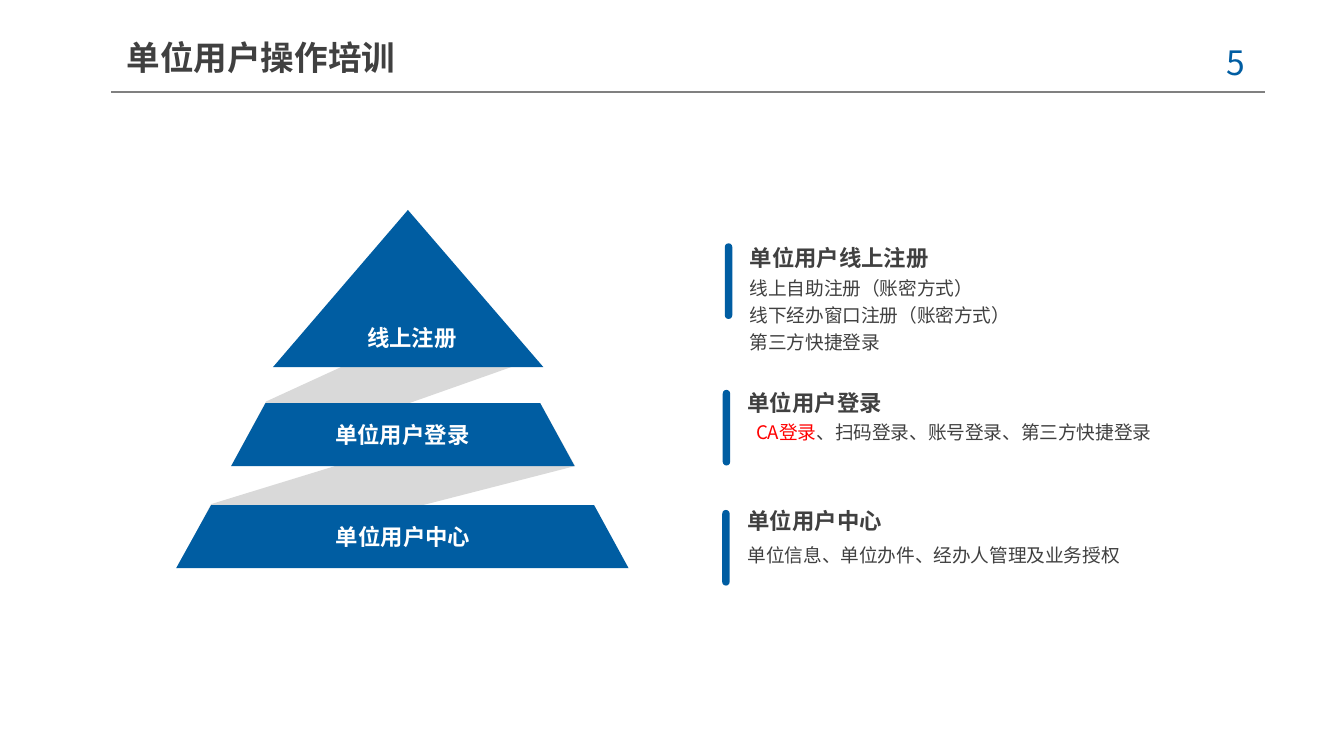
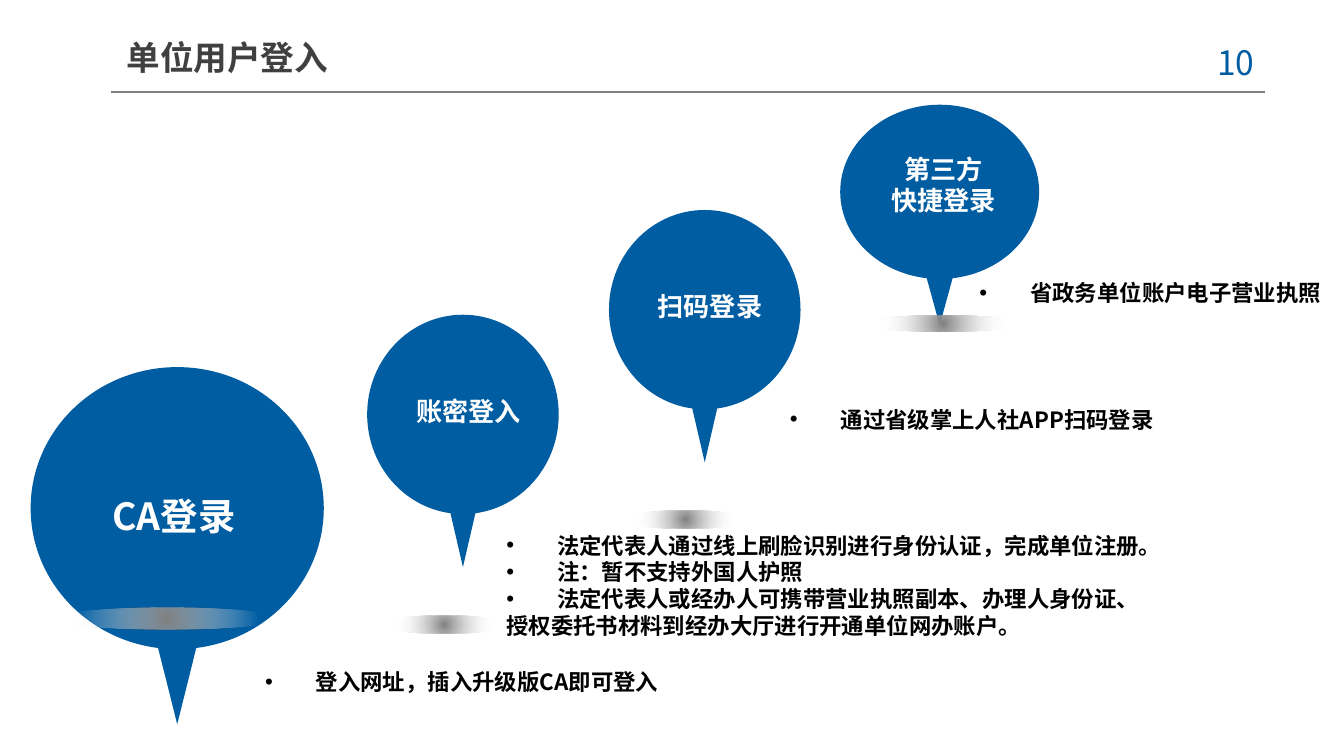
from math import asin, cos, pi, sin, tan

from pptx import Presentation
from pptx.dml.color import RGBColor
from pptx.enum.shapes import MSO_CONNECTOR, MSO_SHAPE
from pptx.enum.text import MSO_ANCHOR, MSO_AUTO_SIZE, PP_ALIGN
from pptx.oxml import parse_xml
from pptx.oxml.ns import nsdecls, qn
from pptx.util import Cm, Pt

FONT = "Noto Sans CJK SC"
BLUE = RGBColor(0x00, 0x5D, 0xA2)
DARK = RGBColor(0x40, 0x40, 0x40)
GREY = RGBColor(0x80, 0x80, 0x80)
PALE = RGBColor(0xD9, 0xD9, 0xD9)
RED = RGBColor(0xFF, 0x00, 0x00)
BLACK = RGBColor(0x00, 0x00, 0x00)
WHITE = RGBColor(0xFF, 0xFF, 0xFF)

LEFT, CENTER, JUSTIFY = PP_ALIGN.LEFT, PP_ALIGN.CENTER, PP_ALIGN.JUSTIFY
TOP, MIDDLE = MSO_ANCHOR.TOP, MSO_ANCHOR.MIDDLE
GROW, FIXED = MSO_AUTO_SIZE.SHAPE_TO_FIT_TEXT, MSO_AUTO_SIZE.NONE
STRAIGHT = MSO_CONNECTOR.STRAIGHT
ELLIPSE, ROUND_BAR = MSO_SHAPE.OVAL, MSO_SHAPE.ROUND_2_SAME_RECTANGLE

DEFAULT_INSETS = (0.25, 0.13)
SMALL_INSETS = (0.1, 0.05)
BULLET_INDENT = 0.96
BODY_SHARE = 0.79    # part of a balloon's height taken by its round body
TAIL_GAP = asin(0.13)  # half the angle left open for the tail


class Painter:
    def __init__(self):
        self.deck = Presentation()
        self.deck.slide_width = Cm(25.4)
        self.deck.slide_height = Cm(14.29)
        self.page = None

    def new_page(self, title, number):
        self.page = self.deck.slides.add_slide(self.deck.slide_layouts[6])
        rule = self.page.shapes.add_connector(
            STRAIGHT, Cm(2.1), Cm(1.74), Cm(23.9), Cm(1.74))
        rule.line.color.rgb = GREY
        rule.line.width = Pt(0.75)
        rule._element.spPr.append(parse_xml(f"<a:effectLst {nsdecls('a')}/>"))
        self.text((22.5, 0.66, 1.86, 1.02), [f"{number} "], 18, BLUE, align=CENTER)
        self.text((2.39, 0.55, 13.21, 1.06), [title], 18, DARK, bold=True,
                  anchor=MIDDLE, insets=(0, 0.13))

    def text(self, place, lines, size, color, bold=False, align=LEFT, anchor=TOP,
             insets=DEFAULT_INSETS, spacing=None, bullets=0):
        """Each line is a string or a list of (text, colour); the first `bullets` lines get a dot."""
        box = self.page.shapes.add_textbox(*map(Cm, place))
        frame = box.text_frame
        frame.word_wrap = True
        frame.vertical_anchor = anchor
        frame.auto_size = FIXED if anchor == MIDDLE else GROW
        frame.margin_left = frame.margin_right = Cm(insets[0])
        frame.margin_top = frame.margin_bottom = Cm(insets[1])
        for index, line in enumerate(lines):
            para = frame.add_paragraph() if index else frame.paragraphs[0]
            para.alignment = align
            if spacing:
                para.line_spacing = spacing
            if index < bullets:
                self.bullet(para)
            for words, tint in [(line, color)] if isinstance(line, str) else line:
                span = para.add_run()
                span.text = words
                self.style(span.font, size, tint, bold)

    @staticmethod
    def style(font, size, color, bold):
        font.size = Pt(size)
        font.bold = bold
        font.color.rgb = color
        font.name = FONT
        font._element.append(parse_xml(f'<a:ea {nsdecls("a")} typeface="{FONT}"/>'))

    @staticmethod
    def bullet(para):
        properties = para._p.get_or_add_pPr()
        properties.set("marL", str(Cm(BULLET_INDENT)))
        properties.set("indent", str(-Cm(BULLET_INDENT)))
        for tag in ('buFont {} typeface="Arial"', 'buChar {} char="•"'):
            properties.append(parse_xml(f"<a:{tag.format(nsdecls('a'))}/>"))

    @staticmethod
    def paint(shape, color):
        shape.shadow.inherit = False
        shape.line.fill.background()
        shape.fill.solid()
        shape.fill.fore_color.rgb = color

    def polygon(self, points, color):
        corners = [(Cm(x), Cm(y)) for x, y in points]
        builder = self.page.shapes.build_freeform(*corners[0])
        builder.add_line_segments(corners[1:], close=True)
        shape = builder.convert_to_shape()
        self.paint(shape, color)
        return shape

    def bar(self, left, top):
        shape = self.page.shapes.add_shape(
            ROUND_BAR, Cm(left), Cm(top), Cm(0.14), Cm(1.43))
        shape.adjustments[0] = shape.adjustments[1] = 0.5
        self.paint(shape, BLUE)

    def balloon(self, left, top, width, height):
        """Draw a round body of four curves that opens into a pointed tail."""
        radius_x, radius_y = width / 2, height * BODY_SHARE / 2
        center_x, center_y = left + radius_x, top + radius_y

        def at(angle, pull=0):
            """Give the point at an angle, moved along the tangent by pull."""
            return (center_x + radius_x * (cos(angle) - pull * sin(angle)),
                    center_y + radius_y * (sin(angle) + pull * cos(angle)))

        stops = [pi / 2 - TAIL_GAP, 0, -pi / 2, -pi, TAIL_GAP - 3 * pi / 2]
        points = [(center_x, top + height), at(stops[0])]
        for start, end in zip(stops, stops[1:]):
            pull = 4 / 3 * tan((end - start) / 4)
            points += [at(start, pull), at(end, -pull), at(end)]
        self.bend(self.polygon(points, BLUE))

    @staticmethod
    def bend(shape):
        """Turn every three lines after the first into one Bézier curve."""
        lines = list(shape._element.iter(qn("a:lnTo")))[1:]
        for index in range(0, len(lines), 3):
            curve = parse_xml(f"<a:cubicBezTo {nsdecls('a')}/>")
            lines[index].addprevious(curve)
            for line in lines[index:index + 3]:
                curve.append(line[0])
                line.getparent().remove(line)

    def glow(self, place):
        """Draw an ellipse that fades from grey at its centre to clear."""
        shape = self.page.shapes.add_shape(ELLIPSE, *map(Cm, place))
        shape.shadow.inherit = False
        shape.line.fill.background()
        shape.fill.background()
        fade = parse_xml(
            f'<a:gradFill {nsdecls("a")} rotWithShape="1"><a:gsLst>'
            f'<a:gs pos="0"><a:srgbClr val="{GREY}"/></a:gs>'
            f'<a:gs pos="80000"><a:srgbClr val="{WHITE}"><a:alpha val="0"/></a:srgbClr></a:gs>'
            '</a:gsLst><a:path path="circle">'
            '<a:fillToRect l="50000" t="50000" r="50000" b="50000"/>'
            '</a:path></a:gradFill>')
        properties = shape._element.spPr
        properties.replace(properties.find(qn("a:noFill")), fade)


def draw_training(painter):
    painter.new_page("单位用户操作培训", 5)

    folds = [
        [(9.17, 5.69), (5.03, 7.59), (4.37, 8.81), (9.83, 6.88)],
        [(10.21, 7.62), (3.99, 9.53), (3.35, 10.74), (10.87, 8.81)],
    ]
    for fold in folds:
        painter.polygon(fold, PALE)

    tiers = [
        ("线上注册", (5.26, 5.62, 5.05, 1.52),
         [(7.71, 3.97), (10.27, 6.94), (5.16, 6.94)]),
        ("单位用户登录", (5.04, 7.72, 5.13, 0.99),
         [(5.02, 7.62), (4.37, 8.81), (10.86, 8.81), (10.21, 7.62)]),
        ("单位用户中心", (3.96, 9.65, 7.32, 0.99),
         [(3.99, 9.55), (3.33, 10.74), (11.88, 10.74), (11.23, 9.55)]),
    ]
    for label, place, outline in tiers:
        painter.polygon(outline, BLUE)
        painter.text(place, [label], 12, WHITE, bold=True, align=CENTER,
                     anchor=MIDDLE, insets=(0, 0))

    sections = [
        ((13.7, 4.6), "单位用户线上注册", (14.07, 4.57, 4.27, 0.61),
         ["线上自助注册（账密方式）", "线下经办窗口注册（账密方式）", "第三方快捷登录"],
         (14.07, 5.1, 9.19, 1.63), JUSTIFY, 1.2),
        ((13.66, 7.37), "单位用户登录", (14.03, 7.3, 3.63, 0.61),
         [[("CA登录", RED), ("、扫码登录、账号登录、第三方快捷登录", DARK)]],
         (14.19, 7.9, 9.19, 0.99), LEFT, None),
        ((13.65, 9.64), "单位用户中心", (14.03, 9.54, 3.63, 0.61),
         ["单位信息、单位办件、经办人管理及业务授权"],
         (14.03, 10.15, 9.19, 0.61), JUSTIFY, 1.2),
    ]
    for corner, heading, heading_place, lines, place, align, spacing in sections:
        painter.bar(*corner)
        painter.text(place, lines, 10, DARK, align=align, insets=SMALL_INSETS,
                     spacing=spacing)
        painter.text(heading_place, [heading], 12, DARK, bold=True,
                     insets=SMALL_INSETS)


def draw_login(painter):
    painter.new_page("单位用户登入", 10)

    balloons = [
        (["账密登入"], 14, (6.94, 5.95, 3.62, 4.77),
         (7.27, 11.63, 2.26, 0.34), (7.35, 7.34, 3.02, 0.86)),
        (["第三方", "快捷登录"], 14, (15.88, 1.98, 3.76, 4.17),
         (16.36, 5.97, 2.92, 0.3), (16.35, 2.77, 2.97, 1.45)),
        (["CA登录"], 20, (0.58, 6.94, 5.54, 6.75),
         (1.02, 11.48, 4.29, 0.41), (0.4, 9.19, 5.77, 1.04)),
        (["扫码登录"], 14, (11.51, 3.97, 3.62, 4.77),
         (11.83, 9.65, 2.26, 0.34), (11.91, 5.36, 3.02, 0.86)),
    ]
    for label, size, place, glow_place, label_place in balloons:
        painter.balloon(*place)
        painter.glow(glow_place)
        painter.text(label_place, label, size, WHITE, bold=True, align=CENTER)

    notes = [
        ((9.32, 9.92, 15.52, 3.51), 3,
         ["法定代表人通过线上刷脸识别进行身份认证，完成单位注册。",
          "注：暂不支持外国人护照",
          "法定代表人或经办人可携带营业执照副本、办理人身份证、",
          "授权委托书材料到经办大厅进行开通单位网办账户。"]),
        ((4.76, 12.5, 16.46, 0.76), 1, ["登入网址，插入升级版CA即可登入"]),
        ((14.68, 7.54, 8.33, 0.76), 1, ["通过省级掌上人社APP扫码登录"]),
        ((18.26, 5.15, 7.14, 0.76), 1, ["省政务单位账户电子营业执照"]),
    ]
    for place, bullets, lines in notes:
        painter.text(place, lines, 12, BLACK, bold=True, bullets=bullets)


def main():
    painter = Painter()
    draw_training(painter)
    draw_login(painter)
    painter.deck.save("out.pptx")


if __name__ == "__main__":
    main()
